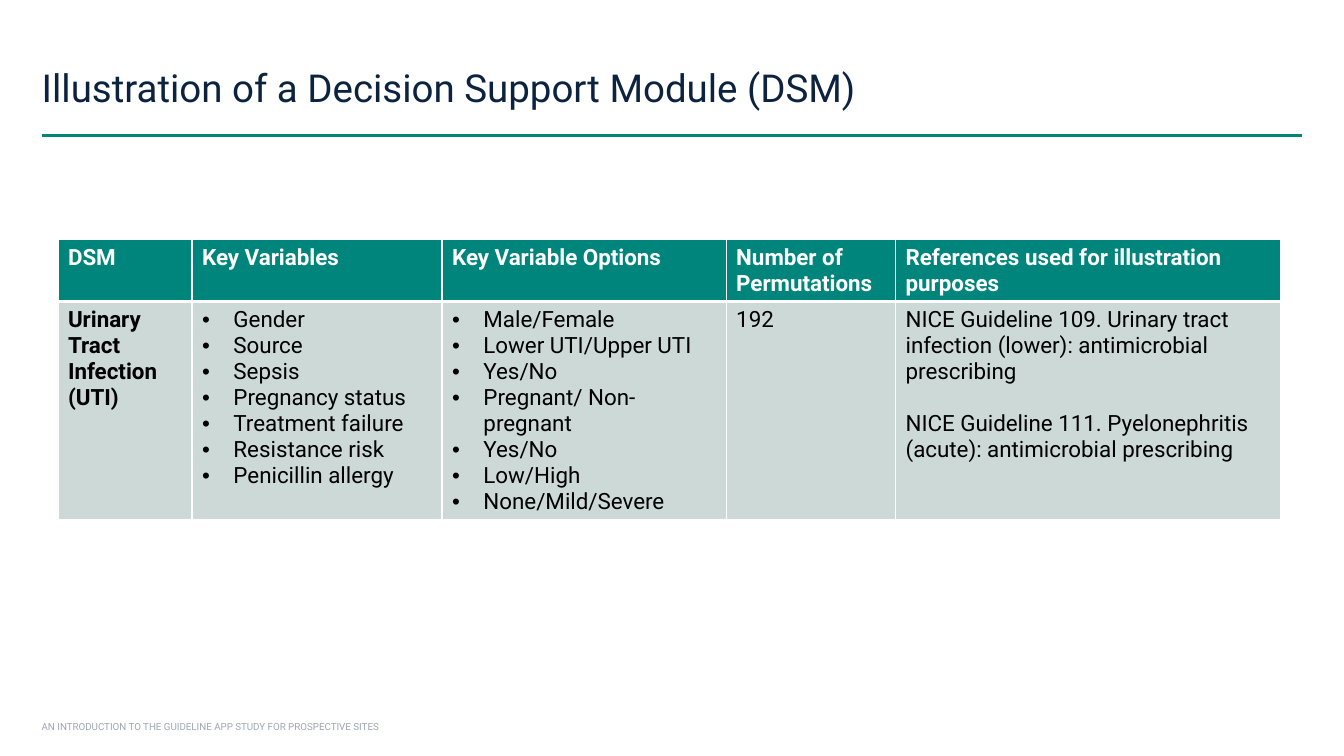
from lxml import etree
from pptx import Presentation
from pptx.dml.color import RGBColor as RGB
from pptx.enum.shapes import MSO_CONNECTOR as Link
from pptx.enum.text import MSO_ANCHOR as Anchor, MSO_AUTO_SIZE as Fit, PP_ALIGN as Align
from pptx.oxml.ns import qn
from pptx.util import Cm, Pt

FACE = "Roboto"
TEAL, GREY, NAVY, PALE = "00857C", "CCD9D7", "0C2340", "9EA7B3"
WHITE, BLACK = "FFFFFF", "000000"
INDENT = Cm(0.79)

HEADS = ["DSM", "Key Variables", "Key Variable Options",
         "Number of Permutations", "References used for illustration purposes"]
WIDTHS = [3.38, 6.3, 7.16, 4.27, 9.7]
BODY = [
    ["Urinary Tract Infection (UTI)"],
    ["Gender", "Source", "Sepsis", "Pregnancy status", "Treatment failure",
     "Resistance risk", "Penicillin allergy"],
    ["Male/Female", "Lower UTI/Upper UTI", "Yes/No", "Pregnant/ Non-pregnant",
     "Yes/No", "Low/High", "None/Mild/Severe"],
    ["192"],
    ["NICE Guideline 109. Urinary tract infection (lower): antimicrobial prescribing",
     "NICE Guideline 111. Pyelonephritis (acute): antimicrobial prescribing"],
]
LISTS = (1, 2)
REFS = 4


def color(code):
    return RGB.from_string(code)


def style(para, size, code, bold=False):
    for run in para.runs:
        font = run.font
        font.name, font.size, font.bold = FACE, Pt(size), bold
        font.color.rgb = color(code)


def bullet(para):
    props = para._p.get_or_add_pPr()
    props.set("marL", str(INDENT))
    props.set("indent", str(-INDENT))
    etree.SubElement(props, qn("a:buFont")).set("typeface", "Arial")
    etree.SubElement(props, qn("a:buChar")).set("char", "•")


def border(cell, top, bottom):
    props = cell._tc.get_or_add_tcPr()
    sides = {"lnL": 1, "lnR": 1, "lnT": top, "lnB": bottom}
    for spot, (side, width) in enumerate(sides.items()):
        line = etree.Element(qn("a:" + side), w=str(Pt(width)))
        fill = etree.SubElement(line, qn("a:solidFill"))
        etree.SubElement(fill, qn("a:srgbClr")).set("val", WHITE)
        props.insert(spot, line)


def place(shape, left, top, width, height):
    shape.left, shape.top, shape.width, shape.height = left, top, width, height


def frame(shape):
    text = shape.text_frame
    text.word_wrap, text.auto_size = True, Fit.NONE
    text.vertical_anchor = Anchor.MIDDLE
    text.margin_left = text.margin_right = text.margin_top = text.margin_bottom = 0
    return text


def add_title(slide, left, top, width, height):
    title = slide.shapes.title
    place(title, left, top, width, height)
    text = frame(title)
    text.text = "Illustration of a Decision Support Module (DSM)"
    para = text.paragraphs[0]
    para.alignment, para.line_spacing = Align.LEFT, 0.9
    style(para, 27.5, NAVY)


def add_rule(slide, left, top, width):
    rule = slide.shapes.add_connector(Link.STRAIGHT, left, top, left + width, top)
    rule.line.color.rgb = color(TEAL)
    rule.line.width = Pt(2.5)
    etree.SubElement(rule._element.spPr, qn("a:effectLst"))


def fill_cell(cell, lines, back, ink, bold, listed=False, gap=0):
    cell.fill.solid()
    cell.fill.fore_color.rgb = color(back)
    text = cell.text_frame
    for spot, line in enumerate(lines):
        para = text.add_paragraph() if spot else text.paragraphs[0]
        para.text = line
        if spot and gap:
            para.space_before = Pt(gap)
        if listed:
            bullet(para)
        style(para, 16, ink, bold)


def add_grid(slide, left, top, width, height):
    grid = slide.shapes.add_table(2, len(HEADS), left, top, width, height).table
    grid.rows[0].height = Cm(1.45)
    grid.rows[1].height = height - Cm(1.45)
    for col, (head, lines) in enumerate(zip(HEADS, BODY)):
        grid.columns[col].width = Cm(WIDTHS[col])
        upper, lower = grid.cell(0, col), grid.cell(1, col)
        fill_cell(upper, [head], TEAL, WHITE, True)
        fill_cell(lower, lines, GREY, BLACK, col == 0, col in LISTS,
                  18.75 if col == REFS else 0)
        border(upper, 1, 3)
        border(lower, 3, 1)


def add_foot(slide, left, top, width, height):
    text = frame(slide.shapes.add_textbox(left, top, width, height))
    text.text = "AN INTRODUCTION TO THE GUIDELINE APP STUDY FOR PROSPECTIVE SITES"
    style(text.paragraphs[0], 7, PALE)


def main():
    deck = Presentation()
    deck.slide_width, deck.slide_height = Cm(33.87), Cm(19.05)
    slide = deck.slides.add_slide(deck.slide_layouts[5])
    edge = Cm(1.05)
    # Heading and its rule
    add_title(slide, edge, Cm(0.25), Cm(29.95), Cm(4.04))
    add_rule(slide, edge, Cm(3.41), Cm(31.77))
    # Module table
    add_grid(slide, Cm(1.46), Cm(6.03), Cm(sum(WIDTHS)), Cm(6.6))
    # Footer
    add_foot(slide, edge, Cm(18.01), Cm(11.43), Cm(0.58))
    deck.save("out.pptx")


if __name__ == "__main__":
    main()
